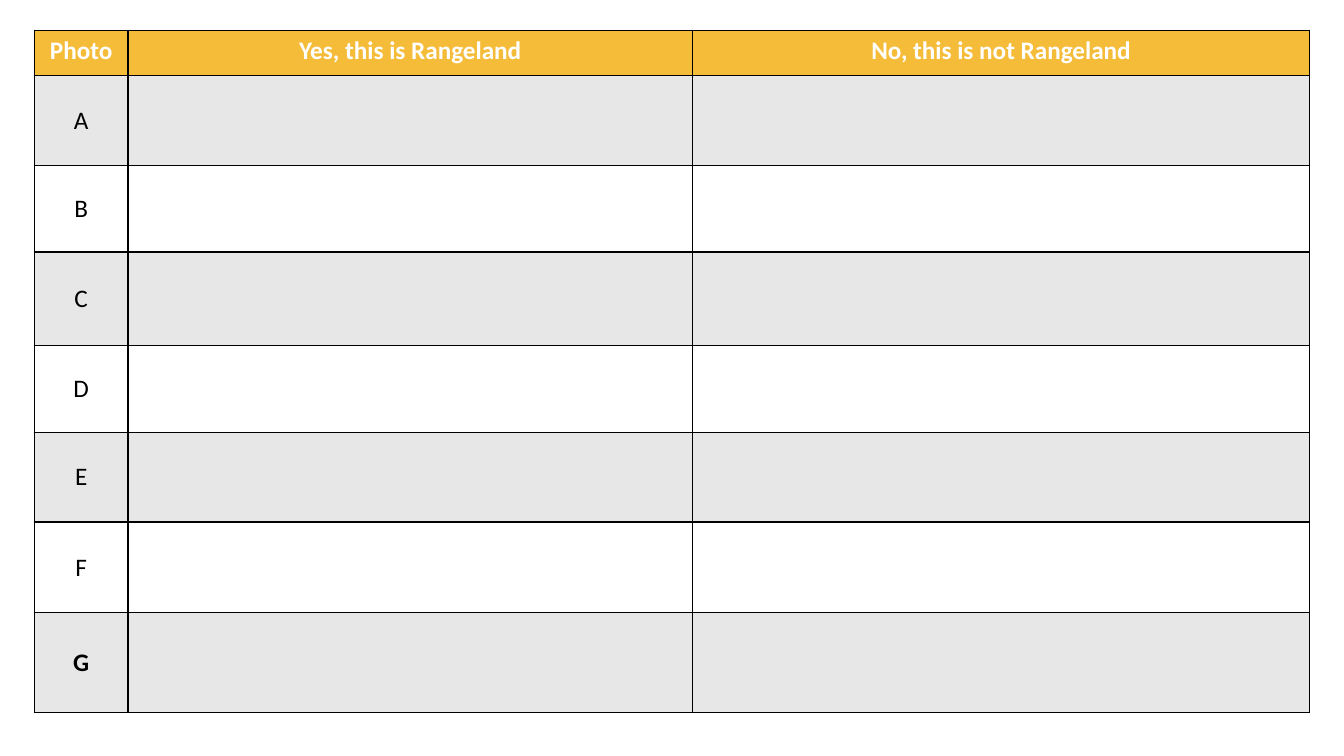
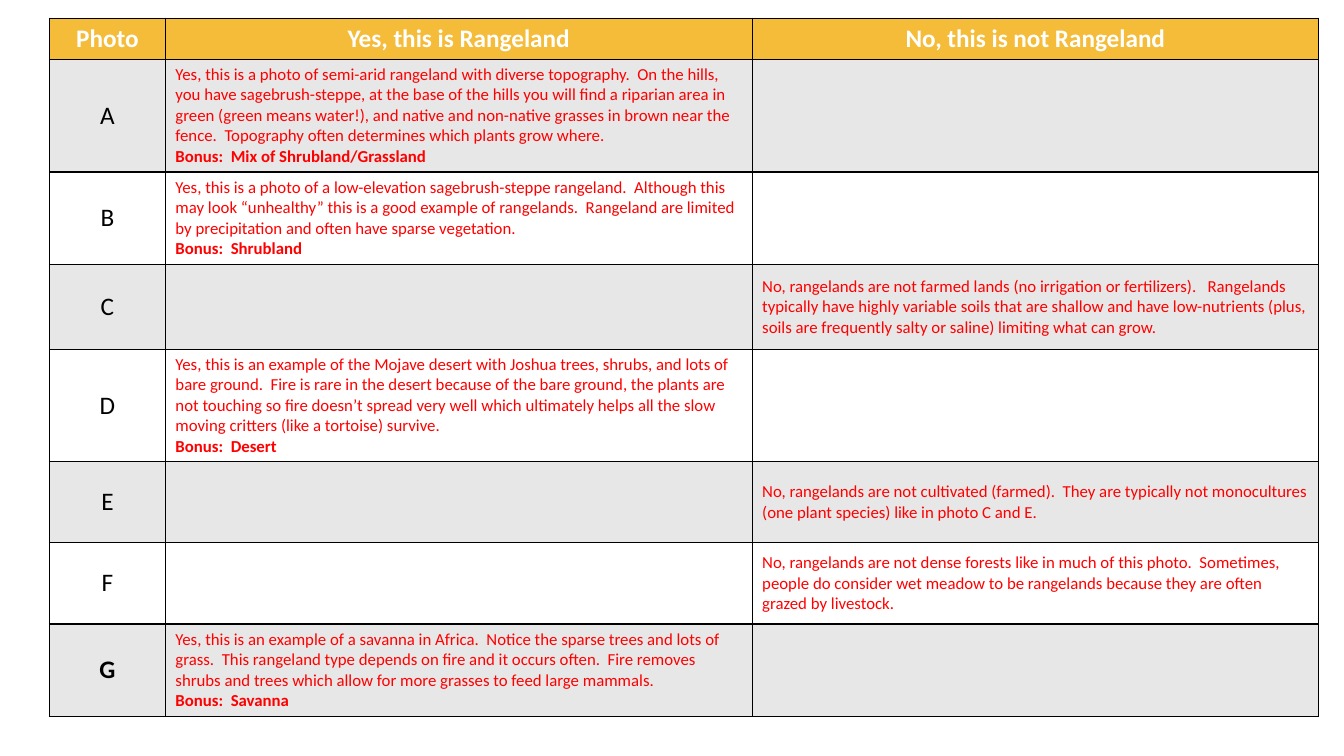
from lxml import etree
from pptx import Presentation
from pptx import util as u
from pptx.dml.color import RGBColor
from pptx.enum import text
from pptx.oxml import ns

COLORS = {
    "header": "F5BC3A",
    "band": "E7E7E7",
    "plain": "FFFFFF",
    "border": "000000",
    "header_text": "FFFFFF",
    "letter": "000000",
    "answer": "FF0000",
}

HEADINGS = ("Photo", "Yes, this is Rangeland", "No, this is not Rangeland")
PHOTOS = "ABCDEFG"
YES, NO = 1, 2

FONTS = {
    "header_text": {"name": "Calibri", "size": u.Pt(18), "bold": True},
    "letter": {"name": "Calibri", "size": u.Pt(18), "bold": False},
    "answer": {"name": "Calibri", "size": u.Pt(12), "bold": False},
}

# Photo letter: answer column, explanation, bonus rangeland type
ANSWERS = {
    "A": (YES, "Yes, this is a photo of semi-arid rangeland with diverse topography.  "
          "On the hills, you have sagebrush-steppe, at the base of the hills you will find "
          "a riparian area in green (green means water!), and native and non-native grasses "
          "in brown near the fence.  Topography often determines which plants grow where.",
          "Mix of Shrubland/Grassland"),
    "B": (YES, "Yes, this is a photo of a low-elevation sagebrush-steppe rangeland.  "
          "Although this may look “unhealthy” this is a good example of rangelands.  "
          "Rangeland are limited by precipitation and often have sparse vegetation.",
          "Shrubland"),
    "C": (NO, "No, rangelands are not farmed lands (no irrigation or fertilizers).   "
          "Rangelands typically have highly variable soils that are shallow and have "
          "low-nutrients (plus, soils are frequently salty or saline) limiting what can grow.",
          None),
    "D": (YES, "Yes, this is an example of the Mojave desert with Joshua trees, shrubs, and "
          "lots of bare ground.  Fire is rare in the desert because of the bare ground, the "
          "plants are not touching so fire doesn’t spread very well which ultimately helps "
          "all the slow moving critters (like a tortoise) survive.",
          "Desert"),
    "E": (NO, "No, rangelands are not cultivated (farmed).  They are typically not "
          "monocultures (one plant species) like in photo C and E.",
          None),
    "F": (NO, "No, rangelands are not dense forests like in much of this photo.  Sometimes, "
          "people do consider wet meadow to be rangelands because they are often grazed by "
          "livestock.",
          None),
    "G": (YES, "Yes, this is an example of a savanna in Africa.  Notice the sparse trees and "
          "lots of grass.  This rangeland type depends on fire and it occurs often.  Fire "
          "removes shrubs and trees which allow for more grasses to feed large mammals.",
          "Savanna"),
}

WORKSHEET = {
    "left": 0.34, "top": 0.3,
    "widths": (0.93, 5.6, 6.12),
    "heights": (0.45, 0.89, 0.86, 0.93, 0.86, 0.89, 0.9, 0.99),
}
ANSWER_KEY = {
    "left": 0.49, "top": 0.18,
    "widths": (1.15, 5.82, 5.62),
    "heights": (0.41, 1.11, 0.92, 0.84, 1.11, 0.8, 0.81, 0.91),
}


def rgb(color):
    return RGBColor.from_string(COLORS[color])


def border_cell(cell):
    """Draw a 1 pt line on all four sides; lines must precede the fill."""
    properties = cell._tc.get_or_add_tcPr()
    for position, side in enumerate(("lnL", "lnR", "lnT", "lnB")):
        line = etree.Element(ns.qn(f"a:{side}"), w=str(u.Pt(1)))
        fill = etree.SubElement(line, ns.qn("a:solidFill"))
        etree.SubElement(fill, ns.qn("a:srgbClr"), val=COLORS["border"])
        properties.insert(position, line)


def write(paragraph, words, style, **changes):
    run = paragraph.add_run()
    run.text = words
    for attribute, value in {**FONTS[style], **changes}.items():
        setattr(run.font, attribute, value)
    run.font.color.rgb = rgb(style)


def write_centered(cell, words, style, **changes):
    paragraph = cell.text_frame.paragraphs[0]
    paragraph.alignment = text.PP_ALIGN.CENTER
    write(paragraph, words, style, **changes)


def write_answer(cell, explanation, bonus):
    frame = cell.text_frame
    write(frame.paragraphs[0], explanation, "answer")
    if bonus:
        write(frame.add_paragraph(), f"Bonus:  {bonus}", "answer", bold=True)


def add_photo_table(slide, layout):
    """Add the headed, banded grid with one row per photo."""
    widths, heights = layout["widths"], layout["heights"]
    table = slide.shapes.add_table(
        len(heights), len(widths),
        u.Inches(layout["left"]), u.Inches(layout["top"]),
        u.Inches(sum(widths)), u.Inches(sum(heights)),
    ).table
    for column, width in zip(table.columns, widths):
        column.width = u.Inches(width)
    for number, (row, height) in enumerate(zip(table.rows, heights)):
        row.height = u.Inches(height)
        background = "header" if number == 0 else "band" if number % 2 else "plain"
        for cell in row.cells:
            cell.fill.solid()
            cell.fill.fore_color.rgb = rgb(background)
            border_cell(cell)
            if number:
                cell.vertical_anchor = text.MSO_ANCHOR.MIDDLE
    for column, heading in enumerate(HEADINGS):
        write_centered(table.cell(0, column), heading, "header_text")
    for number, letter in enumerate(PHOTOS, 1):
        write_centered(table.cell(number, 0), letter, "letter",
                       bold=letter == PHOTOS[-1])
    return table


def fill_answers(table):
    for number, letter in enumerate(PHOTOS, 1):
        column, explanation, bonus = ANSWERS[letter]
        write_answer(table.cell(number, column), explanation, bonus)


def main():
    deck = Presentation()
    deck.slide_width, deck.slide_height = u.Inches(13.33), u.Inches(7.5)
    blank = deck.slide_layouts[6]
    add_photo_table(deck.slides.add_slide(blank), WORKSHEET)
    fill_answers(add_photo_table(deck.slides.add_slide(blank), ANSWER_KEY))
    deck.save("out.pptx")


if __name__ == "__main__":
    main()
